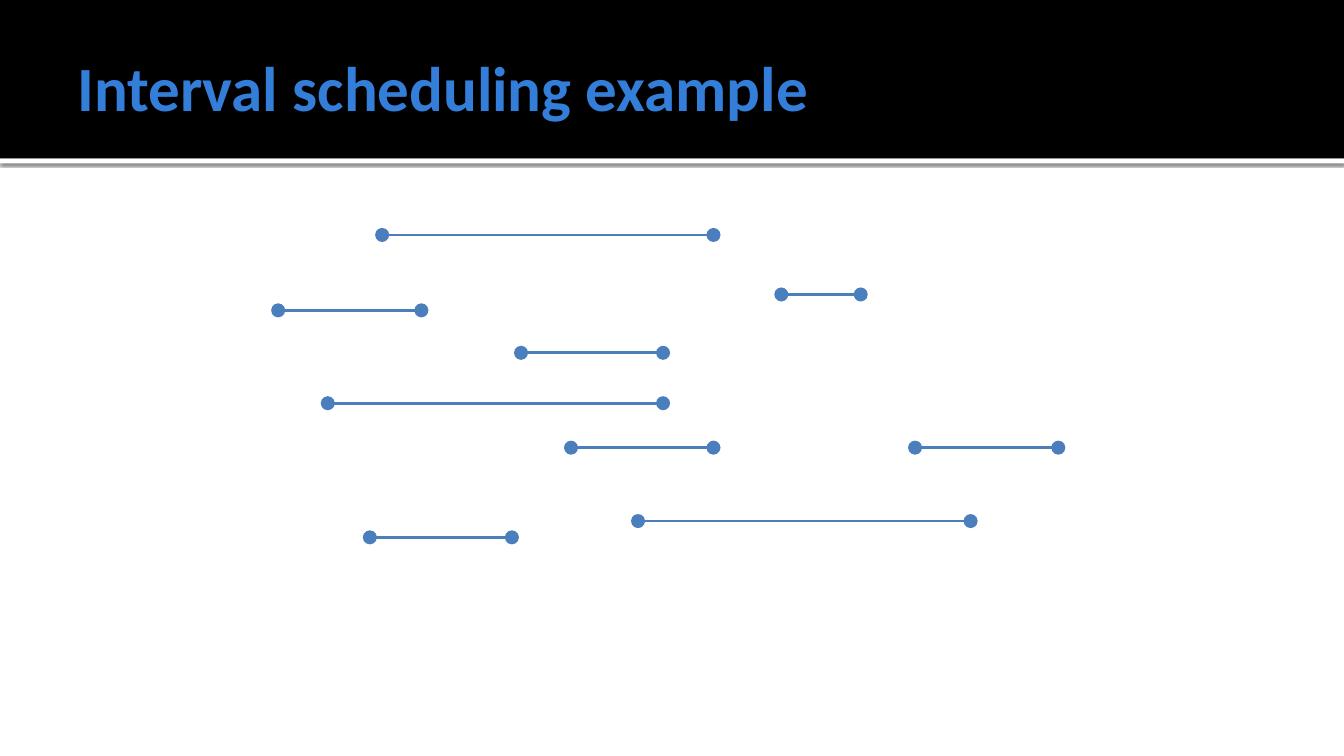
from lxml.etree import SubElement
from pptx import Presentation
from pptx.dml.color import RGBColor
from pptx.enum.shapes import MSO_CONNECTOR, MSO_SHAPE
from pptx.enum.text import MSO_ANCHOR, PP_ALIGN
from pptx.oxml.ns import qn
from pptx.util import Cm, Pt

COLORS = {"band": "000000", "rule": "FFFFFF", "title": "337ED9", "span": "4B7EBC"}
WIDTH, HEIGHT = 33.87, 19.05
BAND = 3.99

# Start, finish and height of each interval, in cm
SPANS = [
    (7.01, 10.62, 7.82),
    (14.39, 17.98, 11.28),
    (13.13, 16.71, 8.89),
    (23.06, 26.67, 11.28),
    (19.69, 21.69, 7.42),
    (8.26, 16.71, 10.16),
    (9.32, 12.9, 13.54),
    (9.63, 17.98, 5.92),
    (16.08, 24.46, 13.13),
]


class Deck:
    font = "Calibri"

    def __init__(self):
        self.prs = Presentation()
        self.prs.slide_width, self.prs.slide_height = Cm(WIDTH), Cm(HEIGHT)
        self.slide = self.prs.slides.add_slide(self.prs.slide_layouts[5])

    def color(self, name):
        return RGBColor.from_string(COLORS[name])

    def band(self, top, height, name):
        shape = self.slide.shapes.add_shape(
            MSO_SHAPE.RECTANGLE, 0, Cm(top), Cm(WIDTH), Cm(height))
        shape.shadow.inherit = False
        shape.fill.solid()
        shape.fill.fore_color.rgb = self.color(name)
        shape.line.fill.background()
        return shape

    def shade(self, shape):
        """Give the shape a soft shadow straight below it."""
        effects = shape.element.spPr.find(qn("a:effectLst"))
        shadow = SubElement(effects, qn("a:outerShdw"), blurRad=str(Pt(2.5)),
                            dist=str(Pt(0.8)), dir="5400000", algn="tl", rotWithShape="0")
        black = SubElement(shadow, qn("a:srgbClr"), val="000000")
        SubElement(black, qn("a:alpha"), val="60000")

    def title(self, text):
        """Fill the title and bring it in front of the bands."""
        title = self.slide.shapes.title
        self.slide.shapes.element.append(title.element)
        title.left, title.top = Cm(1.7), Cm(0.43)
        title.width, title.height = Cm(30.48), Cm(3.48)
        frame = title.text_frame
        frame.text = text
        frame.word_wrap = True
        frame.vertical_anchor = MSO_ANCHOR.MIDDLE
        frame.margin_left = Cm(0.25)
        frame.margin_right = frame.margin_top = frame.margin_bottom = Cm(0.13)
        para = frame.paragraphs[0]
        para.alignment = PP_ALIGN.LEFT
        font = para.font
        font.name, font.size, font.bold = self.font, Pt(45), True
        font.color.rgb = self.color("title")

    def span(self, start, end, y):
        """Draw an interval with a dot at each end."""
        line = self.slide.shapes.add_connector(
            MSO_CONNECTOR.STRAIGHT, Cm(start), Cm(y), Cm(end), Cm(y))
        line.line.color.rgb = self.color("span")
        line.line.width = Pt(2)
        for tag in ("a:headEnd", "a:tailEnd"):
            SubElement(line.line._get_or_add_ln(), qn(tag), type="oval", w="lg", len="lg")
        SubElement(line.element.spPr, qn("a:effectLst"))


def main():
    deck = Deck()
    deck.shade(deck.band(BAND, 0.13, "rule"))
    deck.band(0, BAND, "band")
    deck.title("Interval scheduling example")
    for span in SPANS:
        deck.span(*span)
    deck.prs.save("out.pptx")


if __name__ == "__main__":
    main()
